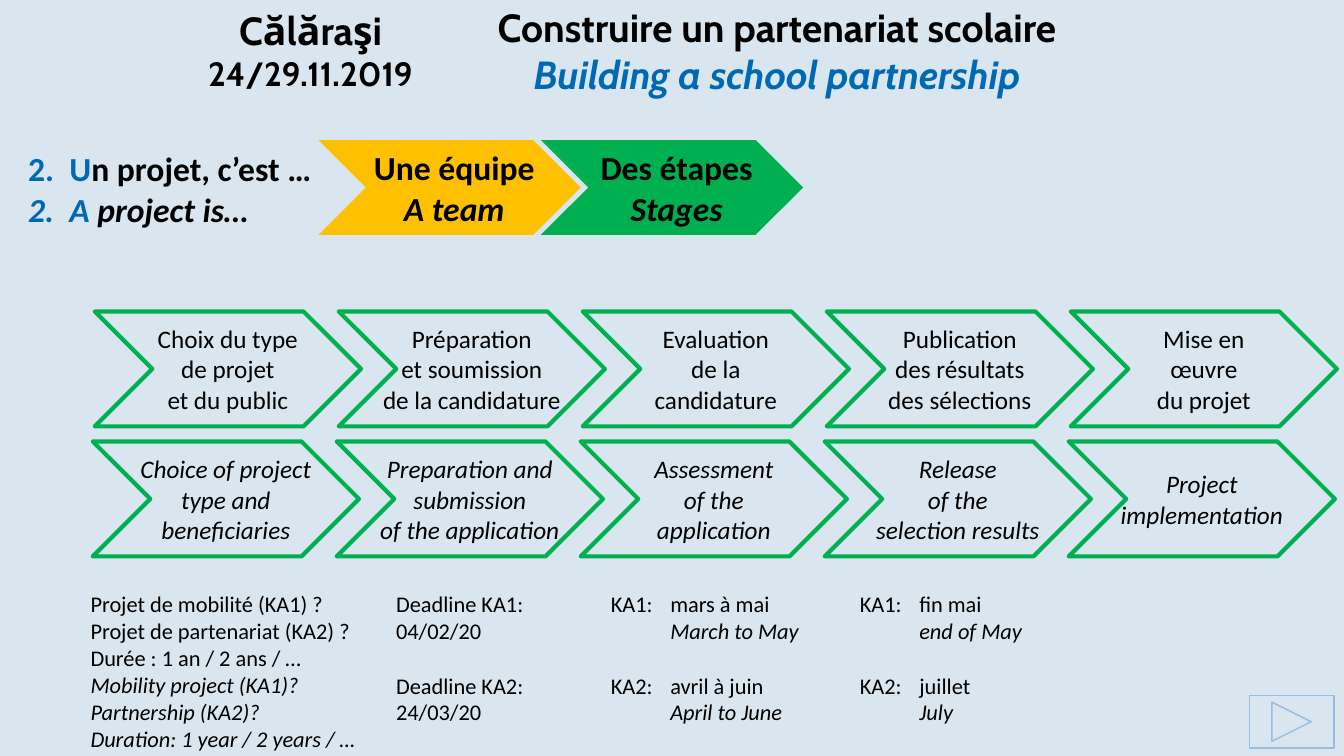
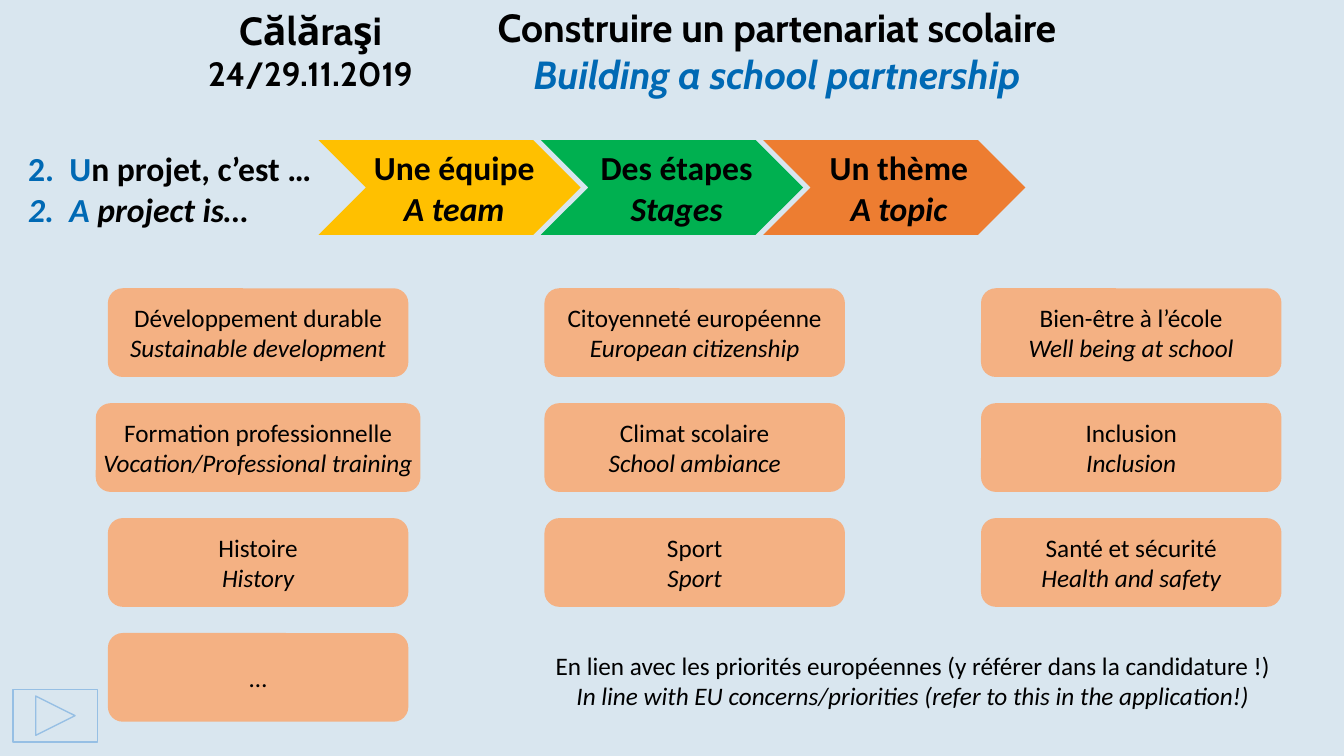
"""Build two slides on the stages and topics of a school partnership project."""
from dataclasses import dataclass

import pptx
import pptx.dml.color
import pptx.enum.shapes
import pptx.enum.text
import pptx.oxml.ns
import pptx.util
from lxml import etree

Inches = pptx.util.Inches
Pt = pptx.util.Pt
RGB = pptx.dml.color.RGBColor
SHAPE = pptx.enum.shapes.MSO_SHAPE
ALIGN = pptx.enum.text.PP_ALIGN
ANCHOR = pptx.enum.text.MSO_ANCHOR

BLACK = RGB(0x00, 0x00, 0x00)
BLUE = RGB(0x00, 0x69, 0xB4)
SKY = RGB(0x96, 0xBF, 0xE4)
PALE = RGB(0xD9, 0xE6, 0xEF)
GOLD = RGB(0xFF, 0xC0, 0x00)
GREEN = RGB(0x00, 0xB0, 0x50)
ORANGE = RGB(0xED, 0x7D, 0x31)
PEACH = RGB(0xF4, 0xB1, 0x83)


@dataclass
class Line:
    text: str
    slant: bool = False
    tint: RGB = BLACK
    size: int = 0
    gap: float = 0
    lead: str = ""


def pair(french, english):
    return [Line(french), Line(english, True)]


TITLE = [Line("Construire un partenariat scolaire"),
         Line("Building a school partnership", True, BLUE)]
EVENT = [Line("Călăraşi"), Line("24/29.11.2019", size=24)]
HEAD = [Line("n projet, c’est …", lead="2.\tU"),
        Line("project is…", True, lead="2.\tA ")]
PARTS = [
    (GOLD, "Une équipe", "A team"),
    (GREEN, "Des étapes", "Stages"),
    (ORANGE, "Un thème", "A topic"),
]
STEPS = [
    (["Choix du type", "de projet", "et du public"],
     ["Choice of project", "type and", "beneficiaries"]),
    (["Préparation", "et soumission", "de la candidature"],
     ["Preparation and", "submission", "of the application"]),
    (["Evaluation", "de la", "candidature"],
     ["Assessment", "of the", "application"]),
    (["Publication", "des résultats", "des sélections"],
     ["Release", "of the", "selection results"]),
    (["Mise en", "œuvre", "du projet"],
     ["Project", "implementation"]),
]
SKIP = 19.5
NOTES = [
    (0.8, 3.0, [Line("Projet de mobilité (KA1) ?"),
                Line("Projet de partenariat (KA2) ?"),
                Line("Durée : 1 an / 2 ans / …"),
                Line("Mobility project (KA1)?", True),
                Line("Partnership (KA2)?", True),
                Line("Duration: 1 year / 2 years / …", True)]),
    (3.83, 1.6, [Line("Deadline KA1:"), Line("04/02/20"),
                 Line("Deadline KA2:", gap=SKIP), Line("24/03/20")]),
    (5.96, 2.2, [Line("KA1:\tmars à mai"), Line("\tMarch to May", True),
                 Line("KA2:\tavril à juin", gap=SKIP),
                 Line("\tApril to June", True)]),
    (8.43, 2.0, [Line("KA1:\tfin mai"), Line("\tend of May", True),
                 Line("KA2:\tjuillet", gap=SKIP), Line("\tJuly", True)]),
]
TOPICS = [
    [pair("Développement durable", "Sustainable development"),
     pair("Citoyenneté européenne", "European citizenship"),
     pair("Bien-être à l’école", "Well being at school")],
    [pair("Formation professionnelle", "Vocation/Professional training"),
     pair("Climat scolaire", "School ambiance"),
     pair("Inclusion", "Inclusion")],
    [pair("Histoire", "History"),
     pair("Sport", "Sport"),
     pair("Santé et sécurité", "Health and safety")],
    [[Line("…")]],
]
WIDE = (1, 0)
CLOSE = pair(
    "En lien avec les priorités européennes (y référer dans la candidature !)",
    "In line with EU concerns/priorities (refer to this in the application!)")


def write(frame, lines, size, face="Calibri", bold=False,
          align=ALIGN.CENTER, tab=0):
    """Fill a text frame with formatted lines."""
    for i, line in enumerate(lines):
        para = frame.add_paragraph() if i else frame.paragraphs[0]
        para.alignment = align
        para.space_before = Pt(line.gap)
        if tab:
            props = para._p.get_or_add_pPr()
            stops = etree.SubElement(props, pptx.oxml.ns.qn("a:tabLst"))
            etree.SubElement(stops, pptx.oxml.ns.qn("a:tab"),
                             pos=str(Inches(tab)), algn="l")
        font = para.font
        font.name, font.size = face, Pt(line.size or size)
        font.bold, font.italic = bold, line.slant
        font.color.rgb = line.tint
        if line.lead:
            lead = para.add_run()
            lead.text = line.lead
            lead.font.color.rgb = BLUE
        para.add_run().text = line.text


def label(slide, box, lines, size, anchor=ANCHOR.TOP, **style):
    """Add a wrapping text box."""
    frame = slide.shapes.add_textbox(*map(Inches, box)).text_frame
    frame.word_wrap = True
    frame.vertical_anchor = anchor
    write(frame, lines, size, **style)


def block(slide, kind, box, fill=None, edge=None, width=1):
    """Add a flat preset shape and return it."""
    shape = slide.shapes.add_shape(kind, *map(Inches, box))
    shape.shadow.inherit = False
    if fill is None:
        shape.fill.background()
    else:
        shape.fill.solid()
        shape.fill.fore_color.rgb = fill
    if edge is None:
        shape.line.fill.background()
    else:
        shape.line.color.rgb = edge
        shape.line.width = Pt(width)
    frame = shape.text_frame
    frame.word_wrap = False
    frame.vertical_anchor = ANCHOR.MIDDLE
    return shape


def start(deck, layout, count, button):
    """Add a slide with its title, event, project parts and next button."""
    slide = deck.slides.add_slide(layout)
    frame = slide.shapes.title.text_frame
    frame.auto_size = pptx.enum.text.MSO_AUTO_SIZE.NONE
    frame.vertical_anchor = ANCHOR.MIDDLE
    write(frame, TITLE, 28, "Cabin", True)
    label(slide, (1.84, 0.01, 2.48, 0.97), EVENT, 28, ANCHOR.MIDDLE,
          face="Cabin", bold=True)
    label(slide, (0.18, 1.42, 3.1, 0.91), HEAD, 24, bold=True,
          align=ALIGN.LEFT, tab=0.41)
    for i, (fill, french, english) in enumerate(PARTS[:count]):
        part = block(slide, SHAPE.CHEVRON,
                     (3.16 + 2.205 * i, 1.39, 2.6, 0.94), fill)
        part.text_frame.margin_left = Inches(0.19)
        write(part.text_frame, pair(french, english), 24, bold=True)
    block(slide, SHAPE.ACTION_BUTTON_FORWARD_OR_NEXT,
          (*button, 0.84, 0.52), edge=SKY)
    return slide


def stages(deck, layout):
    """Build the slide on project stages."""
    slide = start(deck, layout, 2, (12.39, 6.9))
    for i, step in enumerate(STEPS):
        for j, words in enumerate(step):
            box = (0.94 + 2.42 * i - 0.02 * j, 3.09 + 1.29 * j, 2.64, 1.14)
            arrow = block(slide, SHAPE.CHEVRON, box, edge=GREEN, width=3)
            write(arrow.text_frame, [Line(word, j == 1) for word in words], 18)
    for left, width, lines in NOTES:
        label(slide, (left, 5.81, width, 1.45), lines, 16,
              align=ALIGN.LEFT, tab=0.59)


def topics(deck, layout):
    """Build the slide on project topics."""
    slide = start(deck, layout, 3, (0.13, 6.84))
    for i, row in enumerate(TOPICS):
        for j, lines in enumerate(row):
            grow = 0.24 if (i, j) == WIDE else 0
            box = (1.07 + 4.33 * j - grow / 2, 2.86 + 1.14 * i,
                   2.98 + grow, 0.88)
            card = block(slide, SHAPE.ROUNDED_RECTANGLE, box, PEACH)
            write(card.text_frame, lines, 18)
    label(slide, (5.38, 6.4, 7.35, 0.71), CLOSE, 18)


def main():
    deck = pptx.Presentation()
    deck.slide_width, deck.slide_height = Inches(13.33), Inches(7.5)
    back = deck.slide_master.background.fill
    back.solid()
    back.fore_color.rgb = PALE
    layout = deck.slide_layouts.get_by_name("Title Only")
    title = layout.placeholders[0]
    title.left, title.top = Inches(4.61), Inches(-0.02)
    title.width, title.height = Inches(6.19), Inches(1.03)
    stages(deck, layout)
    topics(deck, layout)
    deck.save("out.pptx")


if __name__ == "__main__":
    main()
